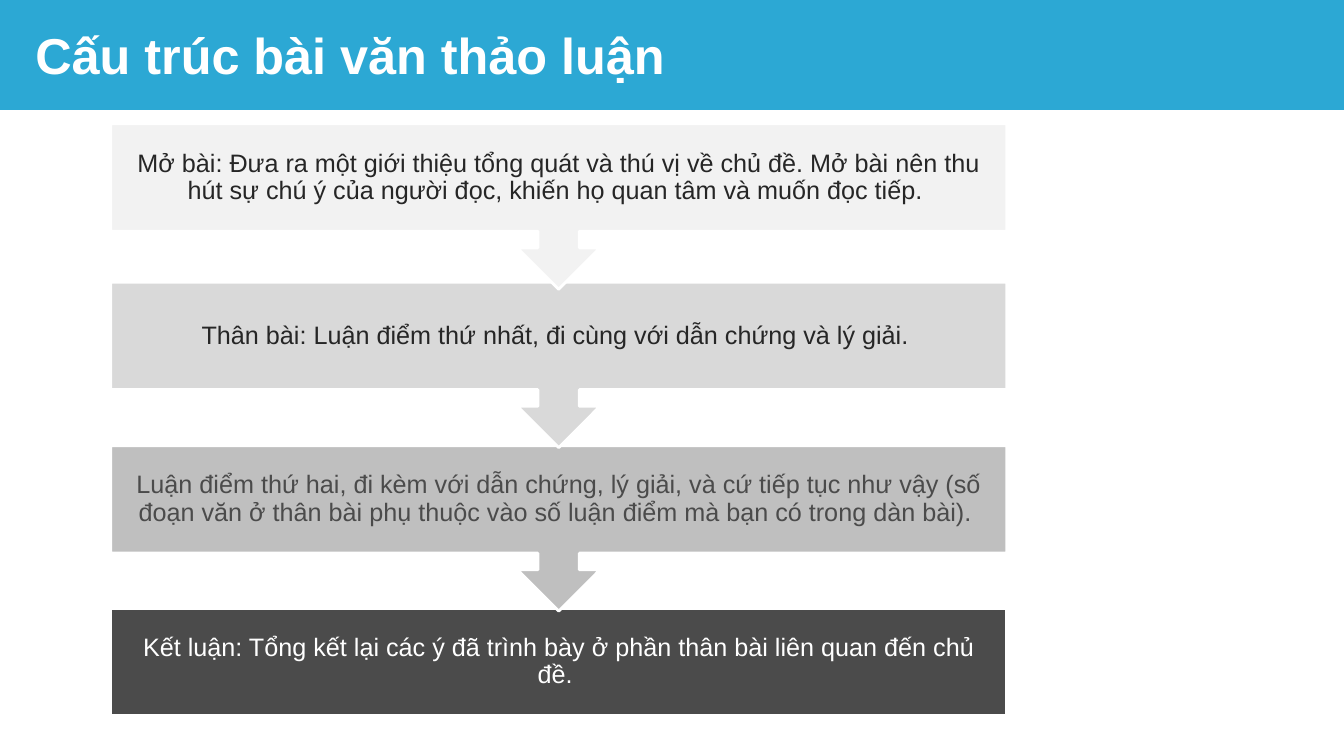
from pptx import Presentation
from pptx.dml.color import RGBColor
from pptx.enum.shapes import MSO_SHAPE as Shape
from pptx.enum.text import MSO_ANCHOR as Anchor, PP_ALIGN as Align
from pptx.util import Cm, Pt

STEP_LEFT, STEP_WIDTH = 2.79, 22.58
BOX_HEIGHT, CALLOUT_HEIGHT = 2.69, 4.17

STEPS = [
    (3.12, "F2F2F2", "262626",
     "Mở bài: Đưa ra một giới thiệu tổng quát và thú vị về chủ đề. Mở bài nên thu "
     "hút sự chú ý của người đọc, khiến họ quan tâm và muốn đọc tiếp. "),
    (7.11, "D9D9D9", "262626",
     "Thân bài: Luận điểm thứ nhất, đi cùng với dẫn chứng và lý giải. "),
    (11.23, "BFBFBF", "4B4B4B",
     "Luận điểm thứ hai, đi kèm với dẫn chứng, lý giải, và cứ tiếp tục như vậy (số "
     "đoạn văn ở thân bài phụ thuộc vào số luận điểm mà bạn có trong dàn bài). "),
    (15.34, "4B4B4B", "FFFFFF",
     "Kết luận: Tổng kết lại các ý đã trình bày ở phần thân bài liên quan đến chủ đề. "),
]


def color(hex_code):
    """Turn a hex string into a colour."""
    return RGBColor.from_string(hex_code)


def write(shape, text, *, size, ink, bold=False, align=Align.LEFT, spacing=1.0, inset=0.25):
    """Write one vertically centred paragraph into a shape."""
    frame = shape.text_frame
    frame.word_wrap = True
    frame.vertical_anchor = Anchor.MIDDLE
    frame.margin_left = frame.margin_right = Cm(inset)
    frame.margin_top = frame.margin_bottom = Cm(min(inset, 0.36))
    para = frame.paragraphs[0]
    para.alignment = align
    para.line_spacing = spacing
    span = para.add_run()
    span.text = text
    span.font.name = "Arial"
    span.font.size = Pt(size)
    span.font.bold = bold
    span.font.color.rgb = color(ink)


def add_block(page, kind, left, top, width, height, fill, outline=None):
    """Add a flat filled shape, with an optional outline."""
    block = page.shapes.add_shape(kind, Cm(left), Cm(top), Cm(width), Cm(height))
    block.shadow.inherit = False
    block.fill.solid()
    block.fill.fore_color.rgb = color(fill)
    if outline:
        block.line.color.rgb = color(outline)
        block.line.width = Pt(2)
    else:
        block.line.fill.background()
    return block


def add_header(page, text):
    """Add the blue band and the slide title."""
    add_block(page, Shape.RECTANGLE, 0, 0, 33.87, 2.77, "2CA8D4")
    box = page.shapes.add_textbox(Cm(0.64), Cm(0.3), Cm(32.84), Cm(2.16))
    write(box, text, size=36, ink="FFFFFF", bold=True)


def add_step(page, top, fill, ink, text, is_last):
    """Add one step, pointing down to the next unless it is the last."""
    kind = Shape.RECTANGLE if is_last else Shape.DOWN_ARROW_CALLOUT
    height = BOX_HEIGHT if is_last else CALLOUT_HEIGHT
    step = add_block(page, kind, STEP_LEFT, top, STEP_WIDTH, height, fill, outline="FFFFFF")
    write(step, text, size=18, ink=ink, align=Align.CENTER, spacing=0.9, inset=0.36)


def main():
    """Build the slide and save it."""
    deck = Presentation()
    deck.slide_width, deck.slide_height = Cm(33.87), Cm(19.05)
    page = deck.slides.add_slide(deck.slide_layouts[6])
    add_header(page, "Cấu trúc bài văn thảo luận")
    for step in reversed(STEPS):
        add_step(page, *step, is_last=step is STEPS[-1])
    deck.save("out.pptx")


if __name__ == "__main__":
    main()
